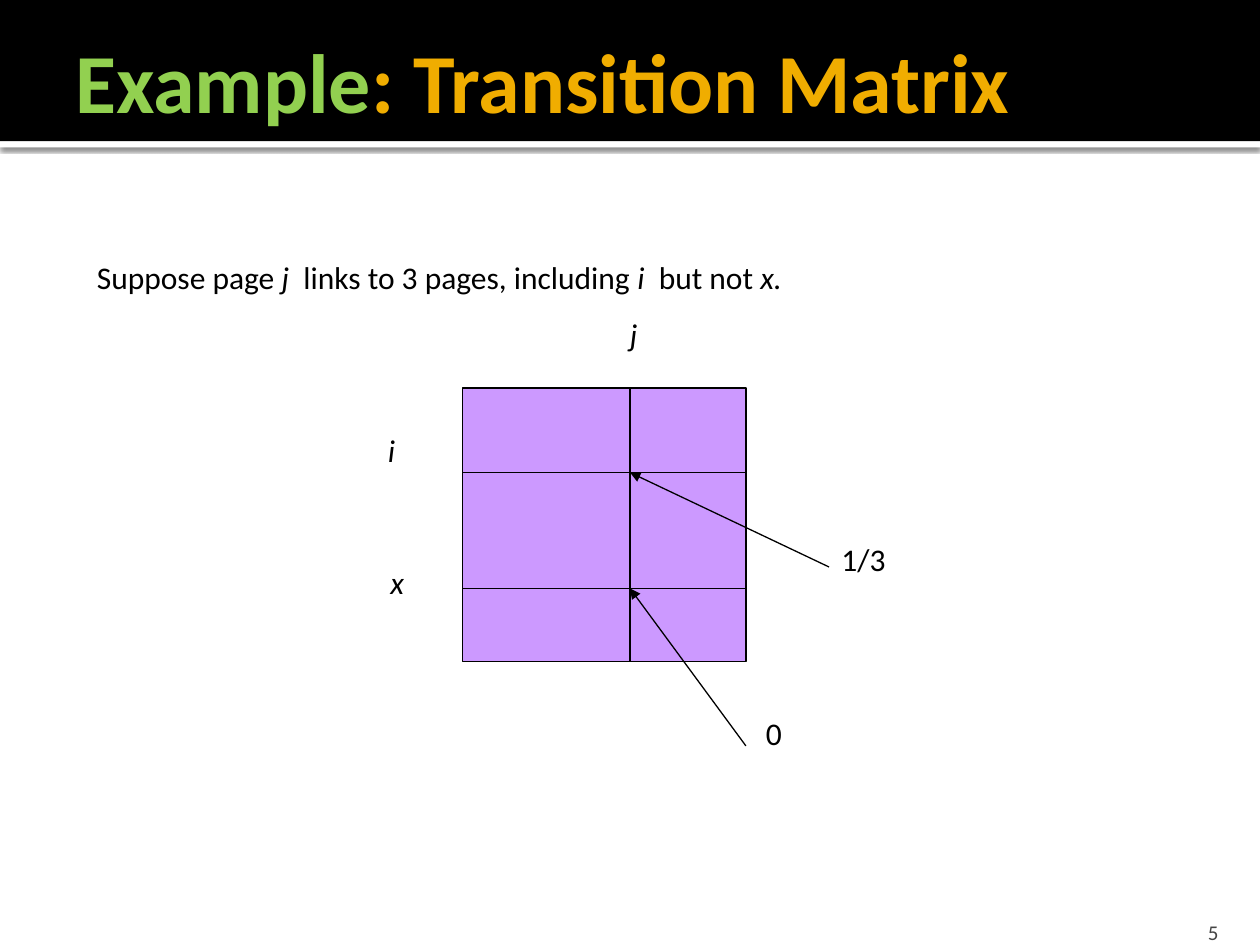
from lxml import etree
from pptx import Presentation, util as u
from pptx.dml.color import RGBColor
from pptx.enum import shapes, text
from pptx.oxml import parse_xml
from pptx.oxml.ns import nsdecls, qn

WIDTH, HEIGHT = 10, 7.5
BLACK, WHITE, PURPLE = "000000", "FFFFFF", "CC99FF"
GREEN, GOLD, GREY = "92D050", "F0AD00", "454545"
HEADER_HEIGHT, STRIP_HEIGHT = 1.12, 0.05

LEFT, COLUMN_J, RIGHT = 3.67, 5, 5.92
TOP, ROW_I, ROW_X, BOTTOM = 3.08, 3.75, 4.67, 5.25

TITLE = [("Example", GREEN), (": Transition Matrix", GOLD)]
SENTENCE = [("Suppose page ", False), ("j ", True), (" links to 3 pages, including ", False),
            ("i  ", True), ("but not", False), (" x.", True)]
LABELS = [
    (2.98, 3.37, 0.28, [("i", True)]),
    (4.9, 2.45, 0.3, [("j", True)]),
    (0.67, 2, 8.32, SENTENCE),
    (6.58, 4.24, 0.69, [("1/3", False)]),
    (3, 4.42, 0.37, [("x", True)]),
    (5.98, 5.62, 0.38, [("0", False)]),
]
GRID_LINES = [
    ((LEFT, ROW_I), (RIGHT, ROW_I)),
    ((LEFT, ROW_X), (RIGHT, ROW_X)),
    ((COLUMN_J, TOP), (COLUMN_J, BOTTOM)),
]
ARROWS = [
    ((6.58, 4.5), (COLUMN_J, ROW_I)),
    ((RIGHT, 5.92), (COLUMN_J, ROW_X)),
]

presentation = Presentation()
presentation.slide_width, presentation.slide_height = u.Inches(WIDTH), u.Inches(HEIGHT)
slide = presentation.slides.add_slide(presentation.slide_layouts[6])


def color(value):
    return RGBColor.from_string(value)


def add_box(left, top, width, height, fill, line=None):
    shape = slide.shapes.add_shape(shapes.MSO_SHAPE.RECTANGLE,
                                   *map(u.Inches, (left, top, width, height)))
    shape.shadow.inherit = False
    shape.fill.solid()
    shape.fill.fore_color.rgb = color(fill)
    if line:
        shape.line.color.rgb = color(line)
        shape.line.width = u.Pt(0.75)
    else:
        shape.line.fill.background()
    return shape


def add_text(left, top, width, height, runs, size, bold=False,
             anchor=text.MSO_ANCHOR.TOP, align=text.PP_ALIGN.LEFT, right=0, bottom=0.05):
    frame = slide.shapes.add_textbox(*map(u.Inches, (left, top, width, height))).text_frame
    frame.word_wrap = True
    frame.vertical_anchor = anchor
    frame.margin_right, frame.margin_bottom = u.Inches(right), u.Inches(bottom)
    paragraph = frame.paragraphs[0]
    paragraph.alignment = align
    for content, italic, fill in runs:
        run = paragraph.add_run()
        run.text = content
        run.font.name, run.font.size = "Calibri", u.Pt(size)
        run.font.bold, run.font.italic = bold, italic
        run.font.color.rgb = color(fill)


def add_line(start, end, arrow=False):
    connector = slide.shapes.add_connector(shapes.MSO_CONNECTOR.STRAIGHT,
                                           *map(u.Inches, start + end))
    connector.line.color.rgb = color(BLACK)
    connector.line.width = u.Pt(0.75)
    properties = connector._element.spPr
    if arrow:
        etree.SubElement(properties.find(qn("a:ln")), qn("a:tailEnd"), type="triangle")
    etree.SubElement(properties, qn("a:effectLst"))


strip = add_box(0, HEADER_HEIGHT, WIDTH, STRIP_HEIGHT, WHITE)
strip._element.spPr.find(qn("a:effectLst")).append(parse_xml(
    f'<a:outerShdw {nsdecls("a")} blurRad="{u.Pt(2.5)}" dist="{u.Pt(0.8)}" dir="5400000" '
    f'rotWithShape="0"><a:srgbClr val="{BLACK}"><a:alpha val="60000"/></a:srgbClr></a:outerShdw>'))
add_box(0, 0, WIDTH, HEADER_HEIGHT, BLACK)
add_text(0.5, 0.17, 9.5, 0.92, [(content, False, fill) for content, fill in TITLE], 48,
         bold=True, anchor=text.MSO_ANCHOR.MIDDLE, right=0.05)
add_text(8.97, 7.2, 0.8, 0.3, [("5", False, GREY)], 12, anchor=text.MSO_ANCHOR.BOTTOM,
         align=text.PP_ALIGN.RIGHT, right=0.1, bottom=0)

add_box(LEFT, TOP, RIGHT - LEFT, BOTTOM - TOP, PURPLE, BLACK)
for start, end in GRID_LINES:
    add_line(start, end)
for start, end in ARROWS:
    add_line(start, end, arrow=True)
for left, top, width, runs in LABELS:
    add_text(left, top, width, 0.5, [(content, italic, BLACK) for content, italic in runs], 18)

presentation.save("out.pptx")
